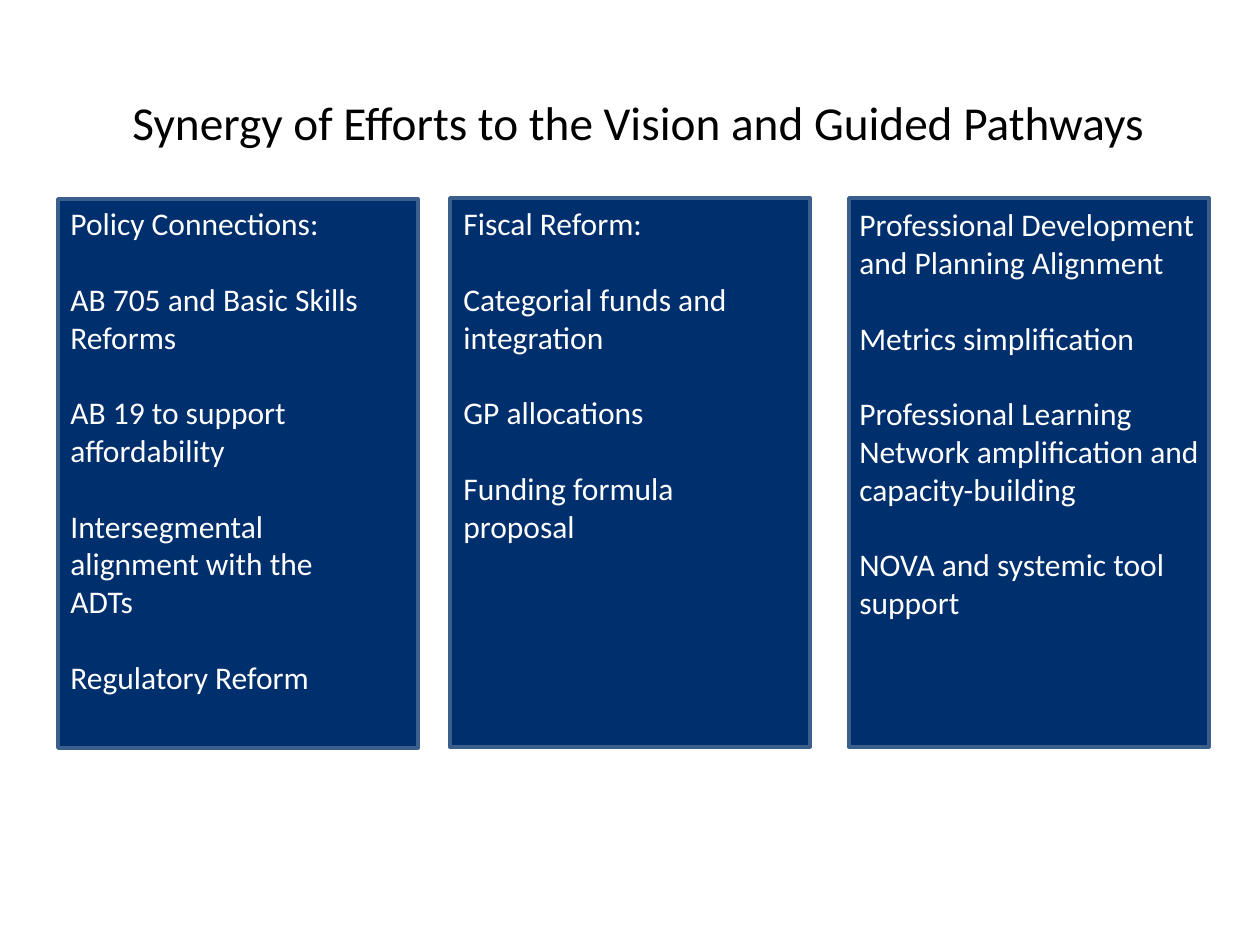
from pptx import Presentation
from pptx.dml.color import RGBColor
from pptx.enum.shapes import MSO_SHAPE as Shape
from pptx.enum.text import MSO_ANCHOR as Anchor, PP_ALIGN as Align
from pptx.util import Emu, Pt

# Content: each column has panel and text positions (left, top, width, height) in px
TITLE = "Synergy of Efforts to the Vision and Guided Pathways "
TITLE_BOX = (84, 82, 1119, 74)
COLUMNS = [
    {
        "panel": (58, 199, 360, 549),
        "text": (58, 198, 319, 566),
        "lines": [
            "Policy Connections:",
            "AB 705 and Basic Skills Reforms",
            "AB 19 to support affordability",
            "Intersegmental alignment with the ADTs",
            "Regulatory Reform",
        ],
    },
    {
        "panel": (450, 198, 360, 549),
        "text": (451, 198, 319, 413),
        "lines": [
            "Fiscal Reform:",
            "Categorial funds and integration",
            "GP allocations",
            "Funding formula proposal",
        ],
    },
    {
        "panel": (849, 198, 360, 549),
        "text": (847, 199, 367, 490),
        "lines": [
            "Professional Development and Planning Alignment",
            "Metrics simplification",
            "Professional Learning Network amplification and capacity-building",
            "NOVA and systemic tool support",
        ],
    },
]

# Format
SCALE = 914400 // 126
BLACK = RGBColor(0x00, 0x00, 0x00)
WHITE = RGBColor(0xFF, 0xFF, 0xFF)
NAVY = RGBColor(0x00, 0x2F, 0x6D)
STEEL = RGBColor(0x3A, 0x5F, 0x8C)
TITLE_FONT = {"name": "Calibri", "size": Pt(27), "color": BLACK}
BODY_FONT = {"name": "Calibri", "size": Pt(18), "color": WHITE}
ITEM_GAP = Pt(21.6)  # one line of body text


def px(box):
    return [Emu(length * SCALE) for length in box]


def set_font(font, values):
    for name, value in values.items():
        if name == "color":
            font.color.rgb = value
        else:
            setattr(font, name, value)


def add_panel(slide, box):
    panel = slide.shapes.add_shape(Shape.RECTANGLE, *px(box))
    panel.shadow.inherit = False
    panel.fill.solid()
    panel.fill.fore_color.rgb = NAVY
    panel.line.color.rgb = STEEL
    panel.line.width = Pt(2)


def add_text(slide, box, lines, font, align=Align.LEFT, anchor=Anchor.TOP):
    frame = slide.shapes.add_textbox(*px(box)).text_frame
    frame.word_wrap = True
    frame.vertical_anchor = anchor
    for index, line in enumerate(lines):
        paragraph = frame.add_paragraph() if index else frame.paragraphs[0]
        paragraph.alignment = align
        if index:
            paragraph.space_before = ITEM_GAP
        run = paragraph.add_run()
        run.text = line
        set_font(run.font, font)


def main():
    presentation = Presentation()
    presentation.slide_width, presentation.slide_height = px((1260, 945))
    slide = presentation.slides.add_slide(presentation.slide_layouts[6])

    # Title
    add_text(slide, TITLE_BOX, [TITLE], TITLE_FONT, Align.CENTER, Anchor.BOTTOM)

    # Panels, then the text over them
    for column in COLUMNS:
        add_panel(slide, column["panel"])
    for column in COLUMNS:
        add_text(slide, column["text"], column["lines"], BODY_FONT)

    presentation.save("out.pptx")


if __name__ == "__main__":
    main()
